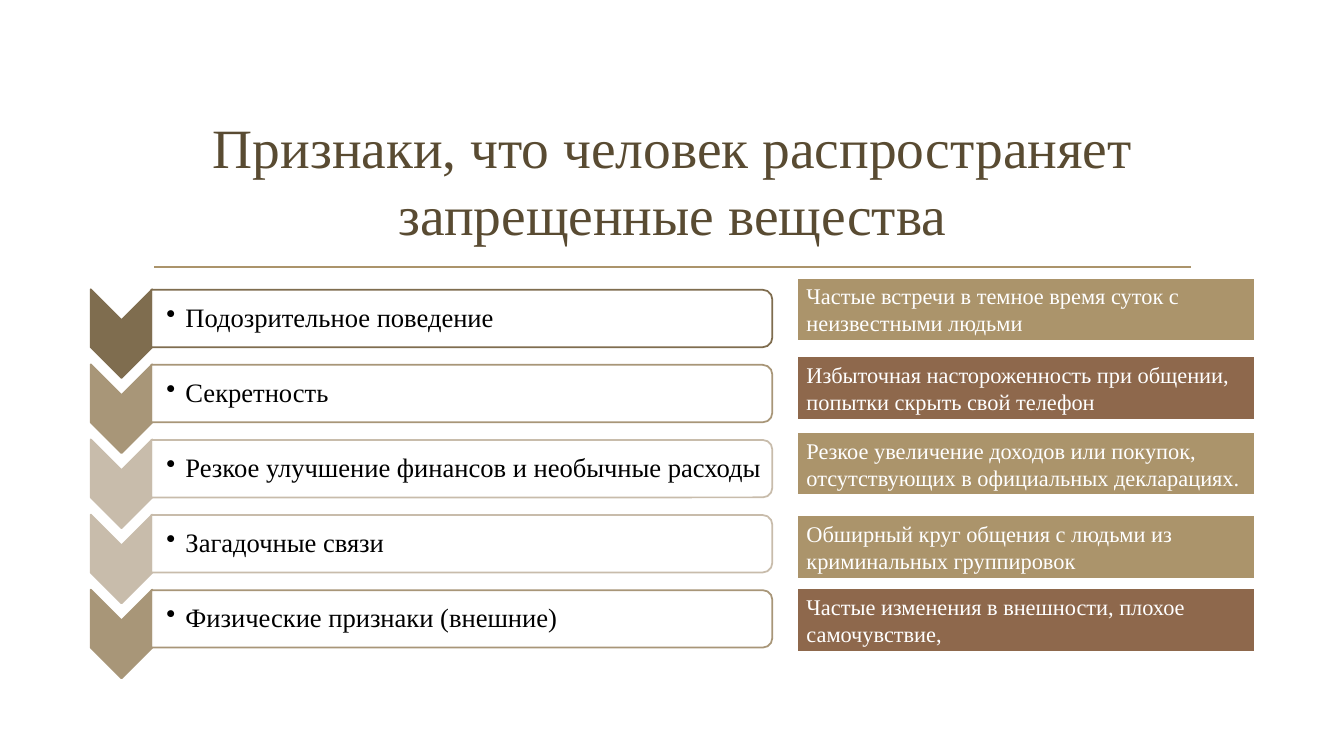
from typing import NamedTuple

from lxml.etree import SubElement
from pptx import Presentation
from pptx.dml.color import RGBColor
from pptx.enum.shapes import MSO_CONNECTOR, MSO_SHAPE as Preset
from pptx.enum.text import MSO_ANCHOR as Anchor, PP_ALIGN as Align
from pptx.oxml.ns import qn
from pptx.util import Inches, Pt

FONT = "Times New Roman"
WHITE = RGBColor(0xFF, 0xFF, 0xFF)
BLACK = RGBColor(0x00, 0x00, 0x00)
TITLE_BROWN = RGBColor(0x59, 0x4B, 0x32)
DARK_OLIVE = RGBColor(0x7F, 0x6D, 0x4F)
TAN = RGBColor(0xA8, 0x96, 0x78)
PALE_TAN = RGBColor(0xC8, 0xBC, 0xAB)
GOLD = RGBColor(0xAB, 0x94, 0x6B)
RUST = RGBColor(0x8E, 0x68, 0x4C)


class Column(NamedTuple):
    left: float
    width: float

    @property
    def center(self) -> float:
        return self.left + self.width / 2


class Sign(NamedTuple):
    label: str
    color: RGBColor
    note: str
    note_color: RGBColor
    note_top: float


# Grid, in inches
TITLE_COLUMN = Column(1.42, 10.5)
RULE_COLUMN = Column(1.53, 10.28)
CHEVRON_COLUMN = Column(0.9, 0.61)
BAR_COLUMN = Column(1.5, 6.16)
NOTE_COLUMN = Column(7.9, 4.55)
FIRST_ROW_CENTER, ROW_PITCH = 3.16, 0.745
CHEVRON_HEIGHT, BAR_HEIGHT, LABEL_HEIGHT, NOTE_HEIGHT = 0.88, 0.57, 0.52, 0.64
CHEVRON_DROP = 0.15

SIGNS = [
    Sign("Подозрительное поведение", DARK_OLIVE,
         "Частые встречи в темное время суток с неизвестными людьми", GOLD, 2.75),
    Sign("Секретность", TAN,
         "Избыточная настороженность при общении, попытки скрыть свой телефон", RUST, 3.53),
    Sign("Резкое улучшение финансов и необычные расходы", PALE_TAN,
         "Резкое увеличение доходов или покупок, отсутствующих в официальных декларациях.",
         GOLD, 4.28),
    Sign("Загадочные связи", PALE_TAN,
         "Обширный круг общения с людьми из криминальных группировок", GOLD, 5.11),
    Sign("Физические признаки (внешние)", TAN,
         "Частые изменения в внешности, плохое самочувствие,", RUST, 5.83),
]


def add_box(slide, preset, column: Column, top: float, height: float,
            fill: RGBColor, line: RGBColor, line_width: float, turned: bool = False):
    """Draw a shape in a column; a turned one is rotated by 90 degrees in place."""
    width, tall = (height, column.width) if turned else (column.width, height)
    middle = top + height / 2
    box = slide.shapes.add_shape(preset, Inches(column.center - width / 2),
                                 Inches(middle - tall / 2), Inches(width), Inches(tall))
    box.rotation = 90 if turned else 0
    box.shadow.inherit = False
    box.fill.solid()
    box.fill.fore_color.rgb = fill
    box.line.color.rgb = line
    box.line.width = Pt(line_width)
    return box


def add_text_box(slide, column: Column, top: float, height: float):
    return slide.shapes.add_textbox(Inches(column.left), Inches(top),
                                    Inches(column.width), Inches(height))


def write(holder, text: str, size: float, color: RGBColor, align=Align.LEFT):
    frame = holder.text_frame
    frame.word_wrap = True
    frame.vertical_anchor = Anchor.MIDDLE
    paragraph = frame.paragraphs[0]
    paragraph.text = text
    paragraph.alignment = align
    paragraph.font.name = FONT
    paragraph.font.size = Pt(size)
    paragraph.font.color.rgb = color


def add_title(slide, text: str) -> None:
    write(add_text_box(slide, TITLE_COLUMN, 1.07, 1.43), text, 39.6, TITLE_BROWN, Align.CENTER)


def add_rule(slide, top: float) -> None:
    left, right = RULE_COLUMN.left, RULE_COLUMN.left + RULE_COLUMN.width
    rule = slide.shapes.add_connector(MSO_CONNECTOR.STRAIGHT, Inches(left), Inches(top),
                                      Inches(right), Inches(top))
    rule.line.color.rgb = GOLD
    rule.line.width = Pt(1.25)
    SubElement(rule._element.spPr, qn("a:effectLst"))


def add_label(slide, text: str, center: float) -> None:
    label = add_text_box(slide, BAR_COLUMN, center - LABEL_HEIGHT / 2, LABEL_HEIGHT)
    frame = label.text_frame
    frame.margin_left = Inches(0.15)
    frame.margin_top = frame.margin_right = frame.margin_bottom = Inches(0.01)
    paragraph = frame.paragraphs[0]
    paragraph.line_spacing = 0.9
    properties = paragraph._p.get_or_add_pPr()
    properties.set("marL", str(Inches(0.19)))
    properties.set("indent", str(-Inches(0.19)))
    SubElement(properties, qn("a:buChar")).set("char", "•")
    write(label, text, 19, BLACK)


def add_sign(slide, row: int, sign: Sign) -> None:
    center = FIRST_ROW_CENTER + row * ROW_PITCH
    # Chevron and labelled bar
    add_box(slide, Preset.CHEVRON, CHEVRON_COLUMN, center + CHEVRON_DROP - CHEVRON_HEIGHT / 2,
            CHEVRON_HEIGHT, sign.color, sign.color, 1.25, turned=True)
    bar = add_box(slide, Preset.ROUND_2_SAME_RECTANGLE, BAR_COLUMN, center - BAR_HEIGHT / 2,
                  BAR_HEIGHT, WHITE, sign.color, 1.25, turned=True)
    bar_color = bar._element.spPr.find(f"{qn('a:solidFill')}/{qn('a:srgbClr')}")
    SubElement(bar_color, qn("a:alpha")).set("val", "90000")
    add_label(slide, sign.label, center)
    # Explanation on the right
    note = add_box(slide, Preset.RECTANGLE, NOTE_COLUMN, sign.note_top, NOTE_HEIGHT,
                   sign.note_color, WHITE, 2)
    write(note, sign.note, 16, WHITE)


def main() -> None:
    deck = Presentation()
    deck.slide_width, deck.slide_height = Inches(13.33), Inches(7.5)
    slide = deck.slides.add_slide(deck.slide_layouts[6])
    add_rule(slide, 2.65)
    add_title(slide, "Признаки, что человек распространяет запрещенные вещества")
    for row, sign in enumerate(SIGNS):
        add_sign(slide, row, sign)
    deck.save("out.pptx")


if __name__ == "__main__":
    main()
